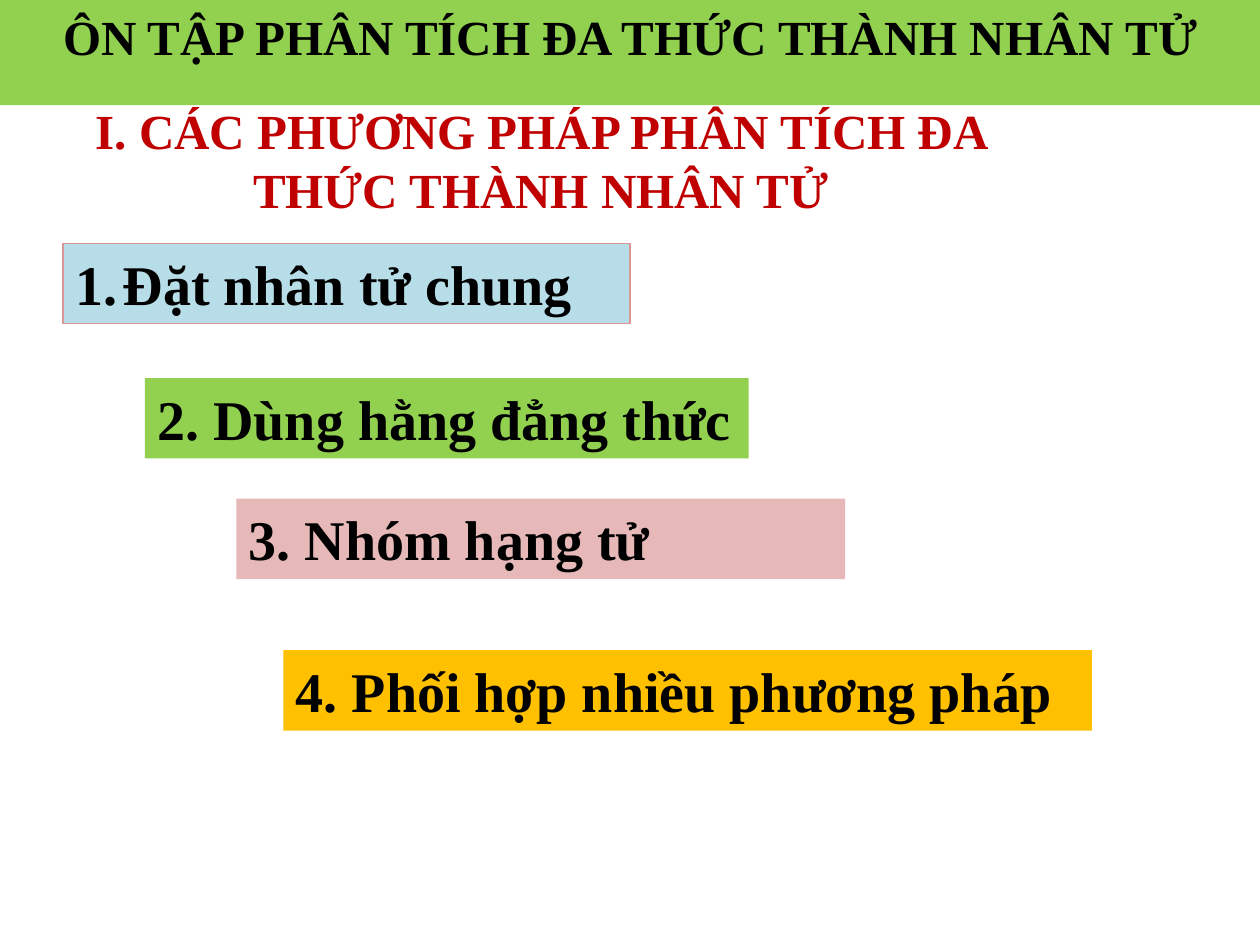
import pptx
import pptx.dml.color
import pptx.enum.shapes
import pptx.enum.text
import pptx.util
from lxml import etree

Pt = pptx.util.Pt
RGB = pptx.dml.color.RGBColor
ALIGN = pptx.enum.text.PP_ALIGN

BLACK = RGB(0x00, 0x00, 0x00)
RED = RGB(0xC0, 0x00, 0x00)
GREEN = RGB(0x92, 0xD0, 0x50)
BLUE = RGB(0xB7, 0xDE, 0xE8)
ROSE = RGB(0xD9, 0x96, 0x94)
PINK = RGB(0xE6, 0xB9, 0xB8)
ORANGE = RGB(0xFF, 0xC0, 0x00)

# Content
FONT = "Times New Roman"
TITLE = "ÔN TẬP PHÂN TÍCH ĐA THỨC THÀNH NHÂN TỬ"
HEADING = "I. CÁC PHƯƠNG PHÁP PHÂN TÍCH ĐA THỨC THÀNH NHÂN TỬ"
# text, left, top, width, fill, line, automatic number, wrap
METHODS = [
    ("Đặt nhân tử chung", 36, 139, 324, BLUE, ROSE, True, True),
    ("2. Dùng hằng đẳng thức", 82.8, 216, 345, GREEN, None, False, False),
    ("3. Nhóm hạng tử", 135, 285, 348, PINK, None, False, True),
    ("4. Phối hợp nhiều phương pháp", 162, 371.5, 462, ORANGE, None, False, True),
]
METHOD_HEIGHT = 46
INDENT = 27


def place(part, left, top, width, height):
    part.left, part.top = Pt(left), Pt(top)
    part.width, part.height = Pt(width), Pt(height)


def write(part, text, size, color, align, wrap=True):
    frame = part.text_frame
    frame.word_wrap = wrap
    frame.auto_size = pptx.enum.text.MSO_AUTO_SIZE.SHAPE_TO_FIT_TEXT
    frame.vertical_anchor = pptx.enum.text.MSO_ANCHOR.TOP
    paragraph = frame.paragraphs[0]
    paragraph.alignment = align
    run = paragraph.add_run()
    run.text = text
    run.font.name, run.font.size, run.font.bold = FONT, Pt(size), True
    run.font.color.rgb = color
    return paragraph


def fill(part, color):
    part.fill.solid()
    part.fill.fore_color.rgb = color


def hang(paragraph, numbered):
    properties = paragraph._p.get_or_add_pPr()
    properties.set("marL", str(Pt(INDENT)))
    properties.set("indent", str(-Pt(INDENT)))
    if numbered:
        bullet = etree.SubElement(properties, pptx.oxml.ns.qn("a:buAutoNum"))
        bullet.set("type", "arabicPeriod")


deck = pptx.Presentation()
deck.slide_width, deck.slide_height = Pt(720), Pt(540)
slide = deck.slides.add_slide(deck.slide_layouts[5])

# Title banner
banner = slide.shapes.title
place(banner, 0, 0, 720, 41)
fill(banner, GREEN)
write(banner, TITLE, 28, BLACK, ALIGN.CENTER)

# Section heading
heading = slide.shapes.add_textbox(Pt(12), Pt(54), Pt(594), Pt(75))
write(heading, HEADING, 28, RED, ALIGN.CENTER)

# Method boxes
for text, left, top, width, color, line, numbered, wrap in METHODS:
    method = slide.shapes.add_shape(
        pptx.enum.shapes.MSO_SHAPE.RECTANGLE,
        Pt(left), Pt(top), Pt(width), Pt(METHOD_HEIGHT))
    method.shadow.inherit = False
    fill(method, color)
    if line is None:
        method.line.fill.background()
    else:
        method.line.color.rgb = line
        method.line.width = Pt(0.75)
    hang(write(method, text, 32, BLACK, ALIGN.LEFT, wrap), numbered)

deck.save("out.pptx")
